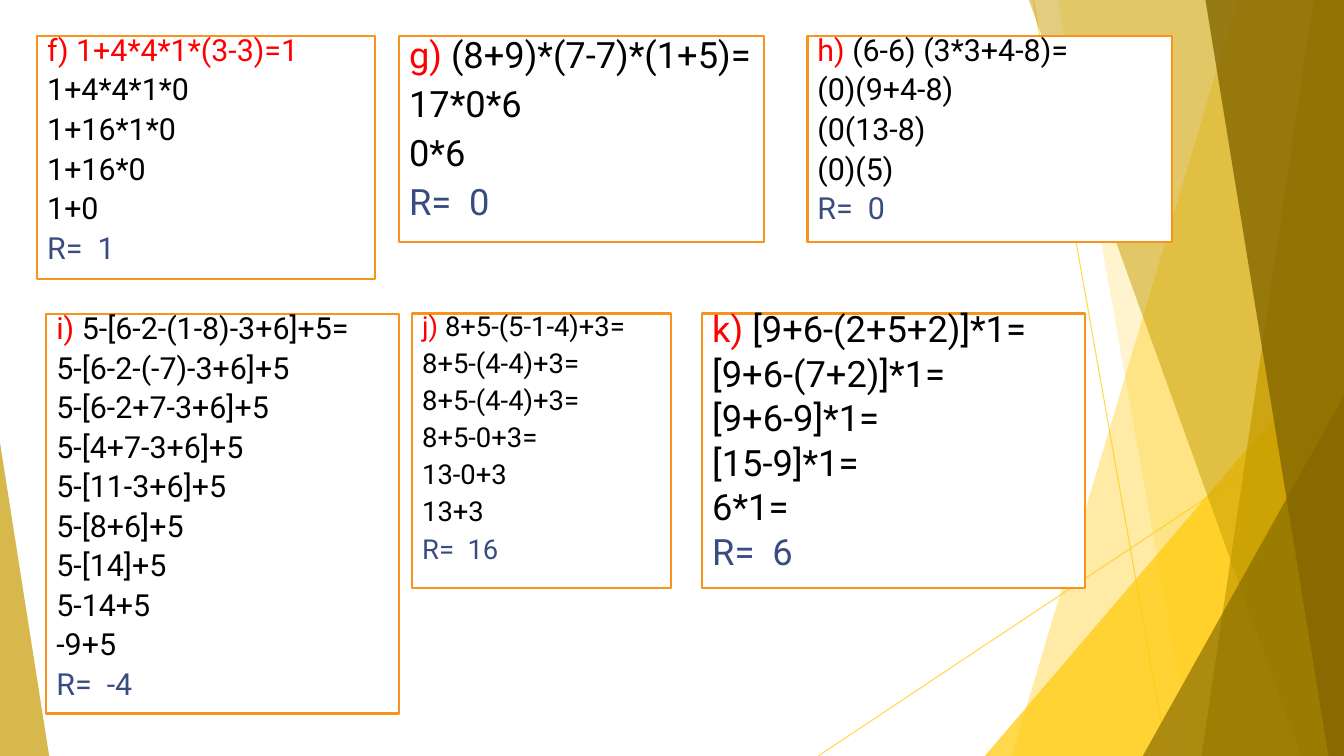
"""Build a slide of six worked arithmetic exercises beside a golden facet border."""
import lxml.etree
import pptx
import pptx.dml.color
import pptx.enum.shapes
import pptx.enum.text
import pptx.oxml.ns
import pptx.util
from dataclasses import dataclass

Cm = pptx.util.Cm
SLIDE_WIDTH, SLIDE_HEIGHT = 33.87, 19.05


@dataclass(frozen=True)
class Theme:
    font: str = "Roboto"
    label: str = "FF0000"
    step: str = "000000"
    answer: str = "384C81"
    paper: str = "FFFFFF"
    border: str = "F8931D"
    gold: str = "FFCA08"
    ochre: str = "C59B00"
    bronze: str = "846700"
    small: float = 19.6
    medium: float = 21.7
    large: float = 25.9


THEME = Theme()

EXERCISES = [
    {"label": "g) ", "place": (10.06, 0.91, 9.19, 5.18), "size": THEME.large, "spacing": 0.8,
     "steps": ["(8+9)*(7-7)*(1+5)=", "17*0*6", "0*6"], "answer": "R=  0"},
    {"label": "f) 1+4*4*1*(3-3)=1", "place": (0.94, 0.91, 8.51, 6.12), "size": THEME.medium, "spacing": 0.7,
     "steps": ["", "1+4*4*1*0", "1+16*1*0", "1+16*0", "1+0"], "answer": "R=  1"},
    {"label": "h) ", "place": (20.35, 0.91, 9.19, 5.18), "size": THEME.medium, "spacing": 0.7,
     "steps": ["(6-6) (3*3+4-8)=", "(0)(9+4-8)", "(0(13-8)", "(0)(5)"], "answer": "R=  0"},
    {"label": "i) ", "place": (1.17, 7.92, 8.89, 10.06), "size": THEME.medium, "spacing": 0.7,
     "steps": ["5-[6-2-(1-8)-3+6]+5=", "5-[6-2-(-7)-3+6]+5", "5-[6-2+7-3+6]+5", "5-[4+7-3+6]+5",
               "5-[11-3+6]+5", "5-[8+6]+5", "5-[14]+5", "5-14+5", "-9+5"], "answer": "R=  -4"},
    {"label": "j) ", "place": (10.39, 7.9, 6.53, 6.91), "size": THEME.small, "spacing": 0.7,
     "steps": ["8+5-(5-1-4)+3=", "8+5-(4-4)+3=", "8+5-(4-4)+3=", "8+5-0+3=", "13-0+3", "13+3"],
     "answer": "R=  16"},
    {"label": "k) ", "place": (17.7, 7.9, 9.65, 6.91), "size": THEME.large, "spacing": 0.7,
     "steps": ["[9+6-(2+5+2)]*1=", "[9+6-(7+2)]*1=", "[9+6-9]*1=", "[15-9]*1=", "6*1="],
     "answer": "R=  6"},
]

RAYS = [
    (26.04, 0, 29.41, SLIDE_HEIGHT),
    (SLIDE_WIDTH, 10.24, 20.62, SLIDE_HEIGHT),
]

FACETS = [
    {"band": (31.19, 25.5), "color": THEME.gold, "opacity": 36},
    {"band": (26.67, 30.05), "color": THEME.gold, "opacity": 20},
    {"triangle": (24.82, 9.05, 10.59), "apex": 1, "color": THEME.gold, "opacity": 72},
    {"band": (25.93, 32.79), "color": THEME.ochre, "opacity": 50},
    {"band": (33.1, 30.28), "color": THEME.ochre, "opacity": 70},
    {"band": (30.38, 33.48), "color": THEME.bronze, "opacity": 80},
    {"triangle": (28.8, 5.07, 9.07), "apex": 1, "color": THEME.bronze, "opacity": 66},
    {"triangle": (0, 1.24, 7.9), "apex": 0, "color": THEME.ochre, "opacity": 70},
]


def rgb(color):
    return pptx.dml.color.RGBColor.from_string(color)


def set_opacity(shape, percent):
    for color in shape.element.spPr.iter(pptx.oxml.ns.qn("a:srgbClr")):
        alpha = lxml.etree.SubElement(color, pptx.oxml.ns.qn("a:alpha"))
        alpha.set("val", str(percent * 1000))


def add_ray(page, start_x, start_y, end_x, end_y):
    ray = page.shapes.add_connector(pptx.enum.shapes.MSO_CONNECTOR.STRAIGHT,
                                    Cm(start_x), Cm(start_y), Cm(end_x), Cm(end_y))
    ray.line.color.rgb = rgb(THEME.gold)
    ray.line.width = pptx.util.Pt(0.75)
    set_opacity(ray, 70)
    lxml.etree.SubElement(ray.element.spPr, pptx.oxml.ns.qn("a:effectLst"))


def add_facet(page, facet):
    if "band" in facet:
        top_x, bottom_x = facet["band"]
        outline = page.shapes.build_freeform(Cm(top_x), 0)
        corners = [(SLIDE_WIDTH, 0), (SLIDE_WIDTH, SLIDE_HEIGHT), (bottom_x, SLIDE_HEIGHT)]
        outline.add_line_segments([(Cm(x), Cm(y)) for x, y in corners], close=True)
        shape = outline.convert_to_shape()
    else:
        left, width, height = facet["triangle"]
        shape = page.shapes.add_shape(pptx.enum.shapes.MSO_SHAPE.ISOSCELES_TRIANGLE,
                                      Cm(left), Cm(SLIDE_HEIGHT - height), Cm(width), Cm(height))
        shape.adjustments[0] = facet["apex"]
    shape.shadow.inherit = False
    shape.fill.solid()
    shape.fill.fore_color.rgb = rgb(facet["color"])
    shape.line.fill.background()
    set_opacity(shape, facet["opacity"])


def add_text(para, text, *, size, color):
    span = para.add_run()
    span.text = text
    span.font.name = THEME.font
    span.font.size = pptx.util.Pt(size)
    span.font.color.rgb = rgb(color)


def add_exercise(page, exercise):
    box = page.shapes.add_shape(pptx.enum.shapes.MSO_SHAPE.RECTANGLE, *map(Cm, exercise["place"]))
    box.shadow.inherit = False
    box.fill.solid()
    box.fill.fore_color.rgb = rgb(THEME.paper)
    box.line.color.rgb = rgb(THEME.border)
    box.line.width = pptx.util.Pt(1.5)
    frame = box.text_frame
    frame.word_wrap = True
    frame.vertical_anchor = pptx.enum.text.MSO_ANCHOR.TOP

    first, *others = exercise["steps"]
    lines = [[(exercise["label"], THEME.label), (first, THEME.step)]]
    lines += [[(step, THEME.step)] for step in others]
    lines.append([(exercise["answer"], THEME.answer)])
    for index, line in enumerate(lines):
        para = frame.add_paragraph() if index else frame.paragraphs[0]
        para.alignment = pptx.enum.text.PP_ALIGN.LEFT
        para.line_spacing = exercise["spacing"]
        para.space_before = pptx.util.Pt(10)
        for text, color in line:
            if text:
                add_text(para, text, size=exercise["size"], color=color)


def main():
    deck = pptx.Presentation()
    deck.slide_width, deck.slide_height = Cm(SLIDE_WIDTH), Cm(SLIDE_HEIGHT)
    page = deck.slides.add_slide(deck.slide_layouts[6])
    for ray in RAYS:
        add_ray(page, *ray)
    for facet in FACETS:
        add_facet(page, facet)
    for exercise in EXERCISES:
        add_exercise(page, exercise)
    deck.save("out.pptx")


if __name__ == "__main__":
    main()
